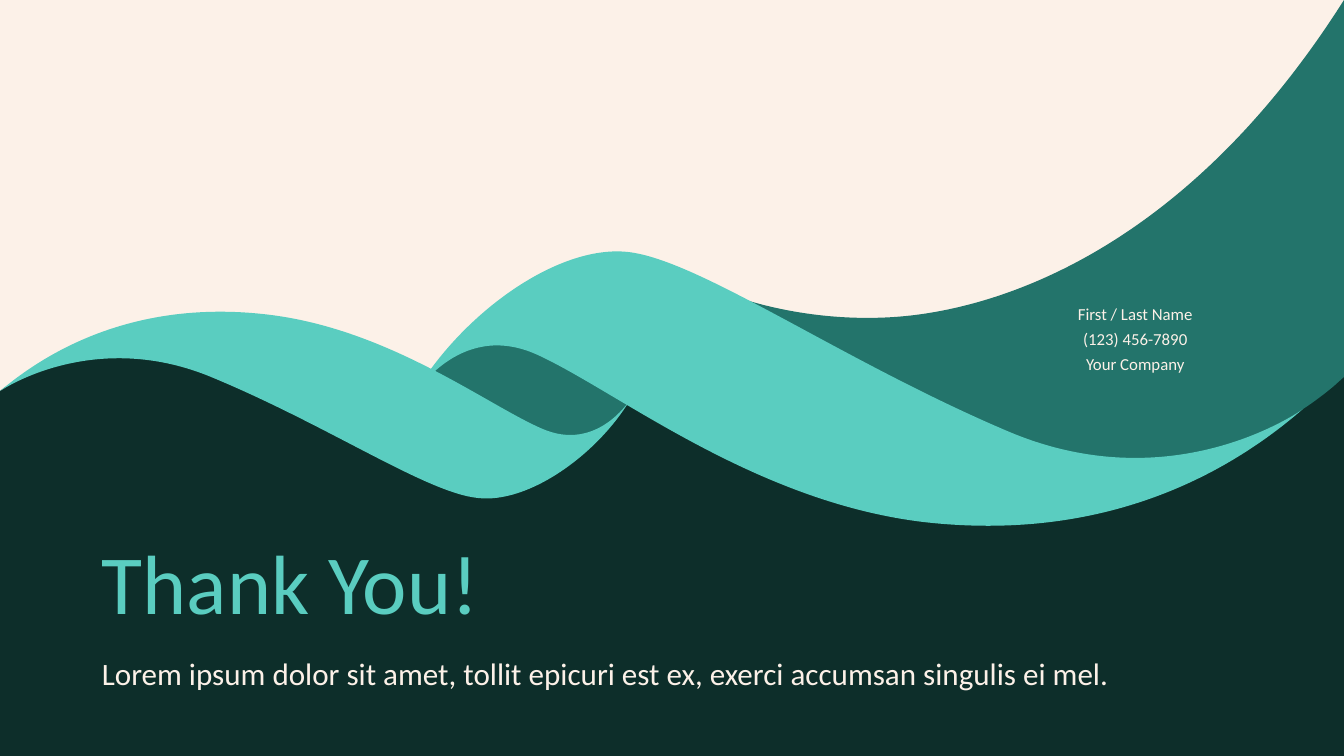
from dataclasses import dataclass

from lxml import etree
from pptx import Presentation
from pptx import util as u
from pptx.dml.color import RGBColor
from pptx.enum import text
from pptx.oxml import ns


@dataclass(frozen=True)
class Theme:
    """Colours, font and type sizes of the slide."""
    cream: str = "FCF1E8"
    night: str = "0D2E2A"
    teal: str = "23746B"
    mint: str = "5ACDC0"
    font: str = "Calibri"
    heading: float = 60
    lead: float = 22.2
    contact: float = 12


COLUMNS, ROWS = 13.33, 7.5

DARK_WAVE = [
    (0, 3.88), (0, 3.88, 0.84, 3.18, 2.31, 3.43), (3.79, 3.67, 4.69, 4.29, 4.69, 4.29),
    (4.69, 4.29, 5.63, 3.15, 6.42, 3.43), (7.22, 3.7, 9.15, 4.55, 10.88, 4.02),
    (12.61, 3.49, 13.33, 2.1, 13.33, 2.1), (COLUMNS, ROWS), (0, ROWS), (0, 3.88),
]
FOLD = [
    (4.24, 3.71), (4.57, 3.41), (4.92, 3.32), (5.47, 3.47), (6.26, 3.95),
    (6.26, 3.95, 6, 4.35, 5.7, 4.48), (5.41, 4.6, 4.24, 3.71, 4.24, 3.71),
]
RIGHT_SWEEP = [
    (13.23, 3.83), (12.65, 4.32, 11.91, 4.59, 11.16, 4.56), (10.81, 4.55, 10.42, 4.48, 10, 4.31),
    (8.96, 3.87, 8.02, 3.31, 7.29, 2.94), (7.29, 2.94, 8.01, 3.22, 8.94, 3.14),
    (9.86, 3.06, 11.73, 2.53, 13.33, 0), (COLUMNS, 3.74), (13.23, 3.83),
]
LEFT_RIBBON = [
    (0, 3.88), (0, 3.88, 0.9, 3.26, 2.07, 3.73), (3.24, 4.21, 4.23, 4.89, 4.74, 4.94),
    (5.24, 5, 5.93, 4.51, 6.26, 3.95), (6.26, 3.95, 5.93, 4.5, 5.37, 4.25),
    (4.82, 4.01, 3.85, 3.26, 2.65, 3.12), (1.46, 2.98, 0.58, 3.39, 0, 3.88),
]
RIGHT_RIBBON = [
    (12.92, 4.06), (12.92, 4.06, 11.65, 4.98, 10, 4.28), (8.35, 3.58, 6.94, 2.58, 6.23, 2.5),
    (5.52, 2.42, 4.54, 3.14, 4.08, 3.96), (4.08, 3.96, 4.54, 3.16, 5.33, 3.52),
    (6.12, 3.88, 7.48, 4.98, 9.17, 5.18), (10.86, 5.37, 12.09, 4.78, 12.92, 4.06),
]


def write(frame, wording, *, size, color, font, align=text.PP_ALIGN.LEFT,
          anchor=text.MSO_ANCHOR.TOP):
    """Fill a text frame with one plain, formatted paragraph."""
    frame.word_wrap = True
    frame.auto_size = text.MSO_AUTO_SIZE.NONE
    frame.vertical_anchor = anchor
    line = frame.paragraphs[0]
    properties = line._p.get_or_add_pPr()
    properties.set("marL", "0")
    properties.set("indent", "0")
    etree.SubElement(properties, ns.qn("a:buNone"))
    line.alignment = align
    line.line_spacing = 0.9
    line.space_before = line.space_after = u.Pt(0)
    run = line.add_run()
    run.text = wording
    run.font.name, run.font.size, run.font.bold = font, u.Pt(size), False
    run.font.color.rgb = RGBColor.from_string(color)


class WaveSlide:
    """Hold the theme and the slide, measured in grid columns and rows."""

    def __init__(self, deck, theme):
        """Add a slide with a title and four body placeholders."""
        self.theme = theme
        self.column = deck.slide_width / COLUMNS
        self.row = deck.slide_height / ROWS
        self.slide = deck.slides.add_slide(deck.slide_layouts.get_by_name("Comparison"))
        self.slots = iter(list(self.slide.placeholders))
        backdrop = self.slide.background.fill
        backdrop.solid()
        backdrop.fore_color.rgb = RGBColor.from_string(theme.cream)

    def points(self, segment):
        """Return the points of a line or curve segment in slide units."""
        return [(round(x * self.column), round(y * self.row))
                for x, y in zip(segment[::2], segment[1::2])]

    def wave(self, outline, color):
        """Draw a filled outline of straight and cubic segments."""
        segments = [self.points(segment) for segment in outline]
        builder = self.slide.shapes.build_freeform(*segments[0][0])
        builder.add_line_segments([segment[-1] for segment in segments[1:]], close=True)
        band = builder.convert_to_shape()
        steps = list(band._element.iter(ns.qn("a:lnTo")))
        for step, segment in zip(steps, segments[1:]):
            if len(segment) == 3:
                curve = etree.Element(ns.qn("a:cubicBezTo"))
                for x, y in segment:
                    etree.SubElement(curve, ns.qn("a:pt"),
                                     x=str(x - band.left), y=str(y - band.top))
                step.getparent().replace(step, curve)
        band.shadow.inherit = False
        band.fill.solid()
        band.fill.fore_color.rgb = RGBColor.from_string(color)
        band.line.fill.background()

    def words(self, wording, left, top, width, height, **style):
        """Place the next placeholder in front and write in it."""
        slot = next(self.slots)
        self.slide.shapes._spTree.append(slot._element)
        slot.left, slot.width = round(left * self.column), round(width * self.column)
        slot.top, slot.height = round(top * self.row), round(height * self.row)
        write(slot.text_frame, wording, font=self.theme.font, **style)


def main():
    """Build the closing slide and save it."""
    deck = Presentation()
    deck.slide_width, deck.slide_height = u.Inches(COLUMNS), u.Inches(ROWS)
    theme = Theme()
    closing = WaveSlide(deck, theme)
    for outline, color in ((DARK_WAVE, theme.night), (FOLD, theme.teal),
                           (RIGHT_SWEEP, theme.teal), (LEFT_RIBBON, theme.mint),
                           (RIGHT_RIBBON, theme.mint)):
        closing.wave(outline, color)
    closing.words("Thank You!", 0.91, 5.16, 10.97, 1.17, size=theme.heading,
                  color=theme.mint, anchor=text.MSO_ANCHOR.BOTTOM)
    closing.words("Lorem ipsum dolor sit amet, tollit epicuri est ex, "
                  "exerci accumsan singulis ei mel.",
                  0.91, 6.48, 10.97, 0.67, size=theme.lead, color=theme.cream)
    for order, detail in enumerate(("First / Last Name", "(123) 456-7890", "Your Company")):
        closing.words(detail, 10.33, 3 + order * 0.25, 1.86, 0.25, size=theme.contact,
                      color=theme.cream, align=text.PP_ALIGN.CENTER,
                      anchor=text.MSO_ANCHOR.MIDDLE)
    deck.save("out.pptx")


if __name__ == "__main__":
    main()
